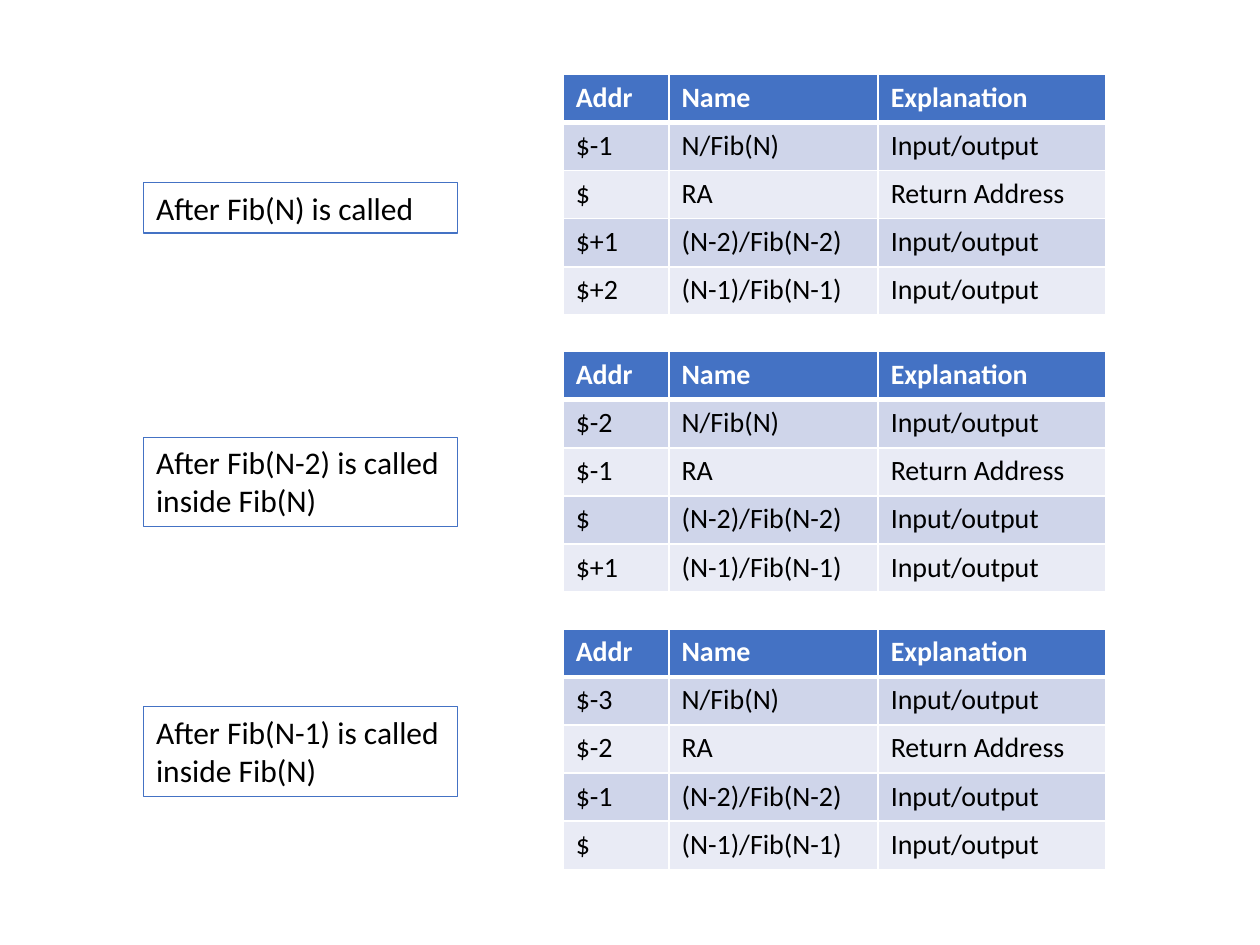
from lxml import etree
from pptx import Presentation
from pptx.dml.color import RGBColor
from pptx.enum.text import MSO_AUTO_SIZE
from pptx.oxml.ns import qn
from pptx.util import Inches, Pt

FIT_SHAPE = MSO_AUTO_SIZE.SHAPE_TO_FIT_TEXT

COLORS = {
    "accent": "4472C4",
    "odd_row": "CFD5EA",
    "even_row": "E9EBF5",
    "white": "FFFFFF",
    "black": "000000",
}
HEADER_FONT = {"name": "Calibri", "size": Pt(16), "bold": True}
BODY_FONT = {"name": "Calibri", "size": Pt(16), "bold": False}
LABEL_FONT = {"name": "Calibri", "size": Pt(18)}

HEADER = ("Addr", "Name", "Explanation")
FRAME_ENTRIES = (
    ("N/Fib(N)", "Input/output"),
    ("RA", "Return Address"),
    ("(N-2)/Fib(N-2)", "Input/output"),
    ("(N-1)/Fib(N-1)", "Input/output"),
)
COLUMN_WIDTHS = (0.84, 1.66, 1.81)
TABLE_LEFT, TABLE_TOP, TABLE_HEIGHT, TABLE_PITCH = 4.47, 0.59, 1.91, 2.2
LABEL_LEFT, LABEL_WIDTH = 1.14, 2.49

# label lines, label top, label height, address of the first entry relative to $
CALLS = (
    (("After Fib(N) is called",), 1.45, 0.4, -1),
    (("After Fib(N-2) is called", "inside Fib(N)"), 3.47, 0.71, -2),
    (("After Fib(N-1) is called", "inside Fib(N)"), 5.61, 0.71, -3),
)


def rgb(color):
    return RGBColor.from_string(COLORS[color])


def set_font(font, font_format, color):
    for attribute, value in font_format.items():
        setattr(font, attribute, value)
    font.color.rgb = rgb(color)


def set_borders(cell, top, bottom):
    """Draw white borders, with the top and bottom widths in points."""
    properties = cell._tc.get_or_add_tcPr()
    widths = {"lnL": 1, "lnR": 1, "lnT": top, "lnB": bottom}
    for position, (side, width) in enumerate(widths.items()):
        border = etree.Element(qn(f"a:{side}"), w=str(Pt(width)))
        fill = etree.SubElement(border, qn("a:solidFill"))
        etree.SubElement(fill, qn("a:srgbClr"), val=COLORS["white"])
        properties.insert(position, border)


def stack_address(offset):
    return f"${offset:+d}" if offset else "$"


def add_stack_table(slide, left, top, width, height, first_offset):
    rows = [HEADER] + [
        (stack_address(first_offset + index), *entry)
        for index, entry in enumerate(FRAME_ENTRIES)
    ]
    table = slide.shapes.add_table(
        len(rows), len(HEADER), left, top, width, height
    ).table
    for column, column_width in zip(table.columns, COLUMN_WIDTHS):
        column.width = Inches(column_width)
    for row_index, texts in enumerate(rows):
        is_header = row_index == 0
        row_color = "odd_row" if row_index % 2 else "even_row"
        for column_index, text in enumerate(texts):
            cell = table.cell(row_index, column_index)
            cell.text = text
            cell.fill.solid()
            cell.fill.fore_color.rgb = rgb("accent" if is_header else row_color)
            set_font(
                cell.text_frame.paragraphs[0].runs[0].font,
                HEADER_FONT if is_header else BODY_FONT,
                "white" if is_header else "black",
            )
            set_borders(
                cell,
                top=3 if row_index == 1 else 1,
                bottom=3 if is_header else 1,
            )


def add_call_label(slide, left, top, width, height, lines):
    label = slide.shapes.add_textbox(left, top, width, height)
    label.line.color.rgb = rgb("accent")
    label.line.width = Pt(0.75)
    frame = label.text_frame
    frame.word_wrap = True
    frame.auto_size = FIT_SHAPE
    frame.text = "\n".join(lines)
    for paragraph in frame.paragraphs:
        set_font(paragraph.runs[0].font, LABEL_FONT, "black")


def main():
    presentation = Presentation()
    presentation.slide_width = Inches(10)
    presentation.slide_height = Inches(7.5)
    slide = presentation.slides.add_slide(presentation.slide_layouts[6])
    for index, (lines, label_top, label_height, first_offset) in enumerate(CALLS):
        add_stack_table(
            slide,
            Inches(TABLE_LEFT),
            Inches(TABLE_TOP + index * TABLE_PITCH),
            Inches(sum(COLUMN_WIDTHS)),
            Inches(TABLE_HEIGHT),
            first_offset,
        )
        add_call_label(
            slide,
            Inches(LABEL_LEFT),
            Inches(label_top),
            Inches(LABEL_WIDTH),
            Inches(label_height),
            lines,
        )
    presentation.save("out.pptx")


if __name__ == "__main__":
    main()
